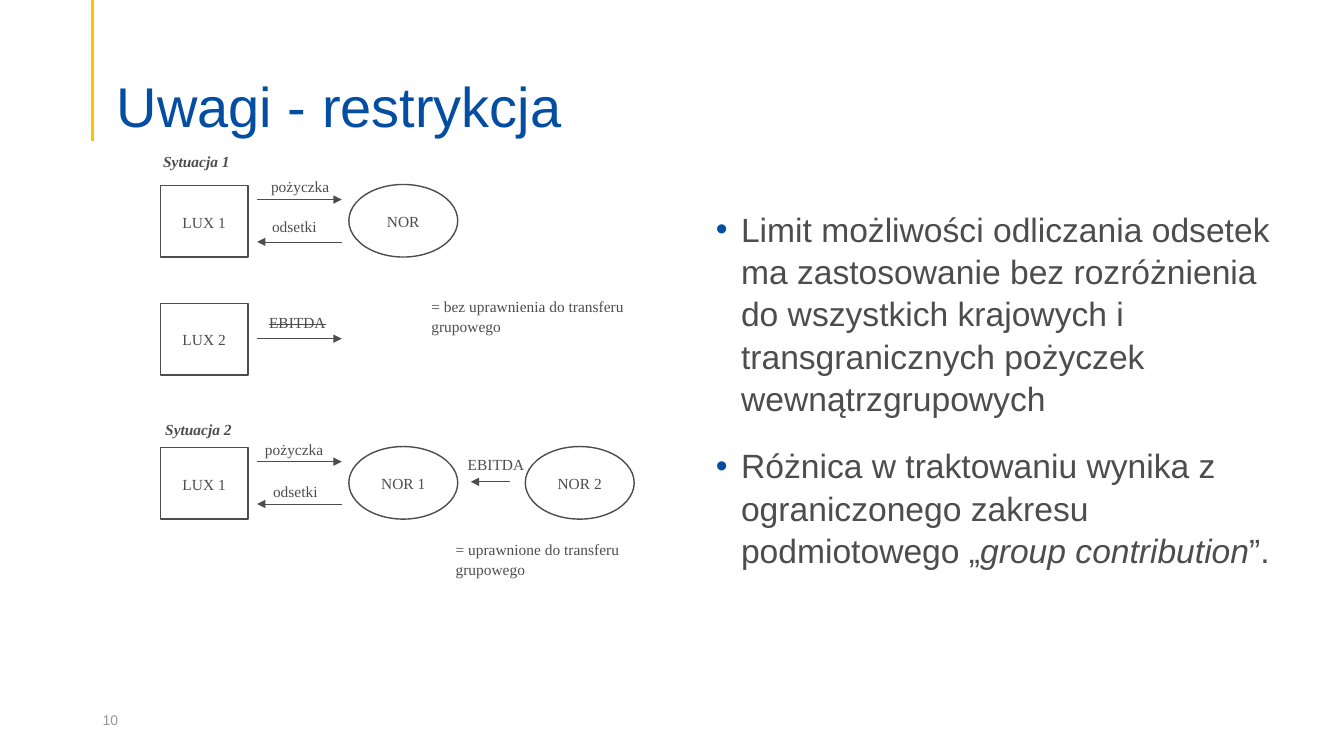
from lxml import etree
from pptx import Presentation
from pptx import util as u
from pptx.dml.color import RGBColor
from pptx.enum import shapes, text
from pptx.oxml.ns import qn

COLORS = {"blue": "034EA2", "gold": "FFC000", "ink": "4D4D4D", "grey": "979797", "white": "FFFFFF"}
SERIF, SANS = "Times New Roman", "Arial"


def rgb(name):
    return RGBColor.from_string(COLORS[name])


class SlideBuilder:
    def __init__(self, slide):
        self.slide = slide

    def style(self, run, font, size, color="ink", bold=False, italic=False):
        run.font.name, run.font.size = font, u.Pt(size)
        run.font.bold, run.font.italic = bold, italic
        run.font.color.rgb = rgb(color)

    def place(self, shape, left, top, width, height):
        shape.left, shape.top = u.Inches(left), u.Inches(top)
        shape.width, shape.height = u.Inches(width), u.Inches(height)

    def title(self, wording):
        heading = self.slide.shapes.title
        self.place(heading, 1.06, 0.53, 11.5, 0.86)
        frame = heading.text_frame
        frame.text = wording
        frame.auto_size = text.MSO_AUTO_SIZE.NONE
        frame.vertical_anchor = text.MSO_ANCHOR.BOTTOM
        frame.margin_bottom = 0
        paragraph = frame.paragraphs[0]
        paragraph.alignment = text.PP_ALIGN.LEFT
        paragraph.line_spacing = 0.9
        self.style(paragraph.runs[0], SANS, 40, "blue")

    def bullets(self, remarks):
        """Each remark is a list of (wording, italic) pieces."""
        body = self.slide.placeholders[1]
        self.place(body, 7, 2, 5.83, 4.27)
        frame = body.text_frame
        frame.auto_size = text.MSO_AUTO_SIZE.NONE
        for index, pieces in enumerate(remarks):
            paragraph = frame.add_paragraph() if index else frame.paragraphs[0]
            props = paragraph._p.get_or_add_pPr()
            props.set("marL", str(u.Inches(0.25)))
            props.set("indent", str(u.Inches(-0.25)))
            bullet_color = etree.SubElement(props, qn("a:buClr"))
            etree.SubElement(bullet_color, qn("a:srgbClr"), val=COLORS["blue"])
            etree.SubElement(props, qn("a:buFont"), typeface=SANS)
            etree.SubElement(props, qn("a:buChar"), char="•")
            paragraph.line_spacing = 1.05
            paragraph.space_before, paragraph.space_after = u.Pt(0), u.Pt(18)
            for wording, italic in pieces:
                run = paragraph.add_run()
                run.text = wording
                self.style(run, SANS, 24, italic=italic)

    def diagram_text(self, frame, wording, emphasis=False):
        frame.word_wrap = True
        frame.text = wording
        paragraph = frame.paragraphs[0]
        paragraph.line_spacing, paragraph.space_after = 1.07, u.Pt(8)
        self.style(paragraph.runs[0], SERIF, 11, bold=emphasis, italic=emphasis)
        return paragraph

    def label(self, wording, left, top, width, height, emphasis=False, struck=False):
        box = self.slide.shapes.add_textbox(0, 0, 0, 0)
        self.place(box, left, top, width, height)
        paragraph = self.diagram_text(box.text_frame, wording, emphasis)
        if struck:
            paragraph.runs[0]._r.get_or_add_rPr().set("strike", "sngStrike")

    def company(self, wording, kind, left, top, width, height):
        node = self.slide.shapes.add_shape(kind, 0, 0, 0, 0)
        self.place(node, left, top, width, height)
        node.shadow.inherit = False
        node.fill.solid()
        node.fill.fore_color.rgb = rgb("white")
        node.line.color.rgb = rgb("ink")
        node.line.width = u.Pt(1)
        node.text_frame.vertical_anchor = text.MSO_ANCHOR.MIDDLE
        self.diagram_text(node.text_frame, wording).alignment = text.PP_ALIGN.CENTER

    def lux(self, wording, top):
        self.company(wording, shapes.MSO_SHAPE.RECTANGLE, 1.59, top, 0.87, 0.71)

    def nor(self, wording, left, top):
        self.company(wording, shapes.MSO_SHAPE.OVAL, left, top, 1.08, 0.72)

    def line(self, start, end, color="ink", width=0.5, arrow=True):
        connector = self.slide.shapes.add_connector(
            shapes.MSO_CONNECTOR.STRAIGHT, *(u.Inches(value) for value in (*start, *end)))
        connector.line.color.rgb = rgb(color)
        connector.line.width = u.Pt(width)
        if arrow:
            etree.SubElement(connector.line._get_or_add_ln(), qn("a:tailEnd"), type="triangle")
        etree.SubElement(connector._element.spPr, qn("a:effectLst"))

    def loan(self, top):
        """Loan arrow to the right, interest arrow back below it."""
        self.line((2.55, top), (3.39, top))
        self.line((3.39, top + 0.42), (2.55, top + 0.42))

    def page_number(self, number):
        box = self.slide.shapes.add_textbox(0, 0, 0, 0)
        self.place(box, 0.92, 6.94, 3, 0.4)
        frame = box.text_frame
        frame.word_wrap = True
        frame.vertical_anchor = text.MSO_ANCHOR.MIDDLE
        frame.text = number
        self.style(frame.paragraphs[0].runs[0], SANS, 10, "grey")


def main():
    deck = Presentation()
    deck.slide_width, deck.slide_height = u.Inches(13.33), u.Inches(7.5)
    page = SlideBuilder(deck.slides.add_slide(deck.slide_layouts[1]))

    page.line((0.92, 0), (0.92, 1.4), "gold", 2.25, arrow=False)
    page.title("Uwagi - restrykcja")
    page.bullets([
        [("Limit możliwości odliczania odsetek ma zastosowanie bez rozróżnienia do wszystkich "
          "krajowych i transgranicznych pożyczek wewnątrzgrupowych", False)],
        [("Różnica w traktowaniu wynika z ograniczonego zakresu podmiotowego „", False),
         ("group contribution", True), ("”.", False)],
    ])
    page.page_number("10")

    for name, top in (("LUX 1", 1.84), ("LUX 2", 3.01), ("LUX 1", 4.44)):
        page.lux(name, top)
    for name, left, top in (("NOR", 3.46, 1.83), ("NOR 1", 3.46, 4.43), ("NOR 2", 5.21, 4.43)):
        page.nor(name, left, top)

    for top in (1.98, 4.58):
        page.loan(top)
    page.line((2.55, 3.36), (3.39, 3.36))
    page.line((5.06, 4.78), (4.67, 4.78))

    page.label("Sytuacja 1", 1.52, 1.45, 1.88, 0.3, emphasis=True)
    page.label("Sytuacja 2", 1.54, 4.11, 1.88, 0.3, emphasis=True)
    for wording, left, top, width, height in (
        ("pożyczka", 2.59, 1.7, 0.83, 0.29),
        ("odsetki", 2.6, 2.09, 0.73, 0.29),
        ("pożyczka", 2.53, 4.3, 0.8, 0.29),
        ("odsetki", 2.61, 4.72, 0.73, 0.29),
        ("= bez uprawnienia do transferu grupowego", 4.18, 2.89, 2.45, 0.48),
        ("= uprawnione do transferu grupowego", 4.42, 5.3, 2.45, 0.48),
        ("EBITDA", 4.54, 4.45, 0.88, 0.34),
    ):
        page.label(wording, left, top, width, height)
    page.label("EBITDA", 2.57, 3.04, 0.88, 0.42, struck=True)

    deck.save("out.pptx")


if __name__ == "__main__":
    main()
